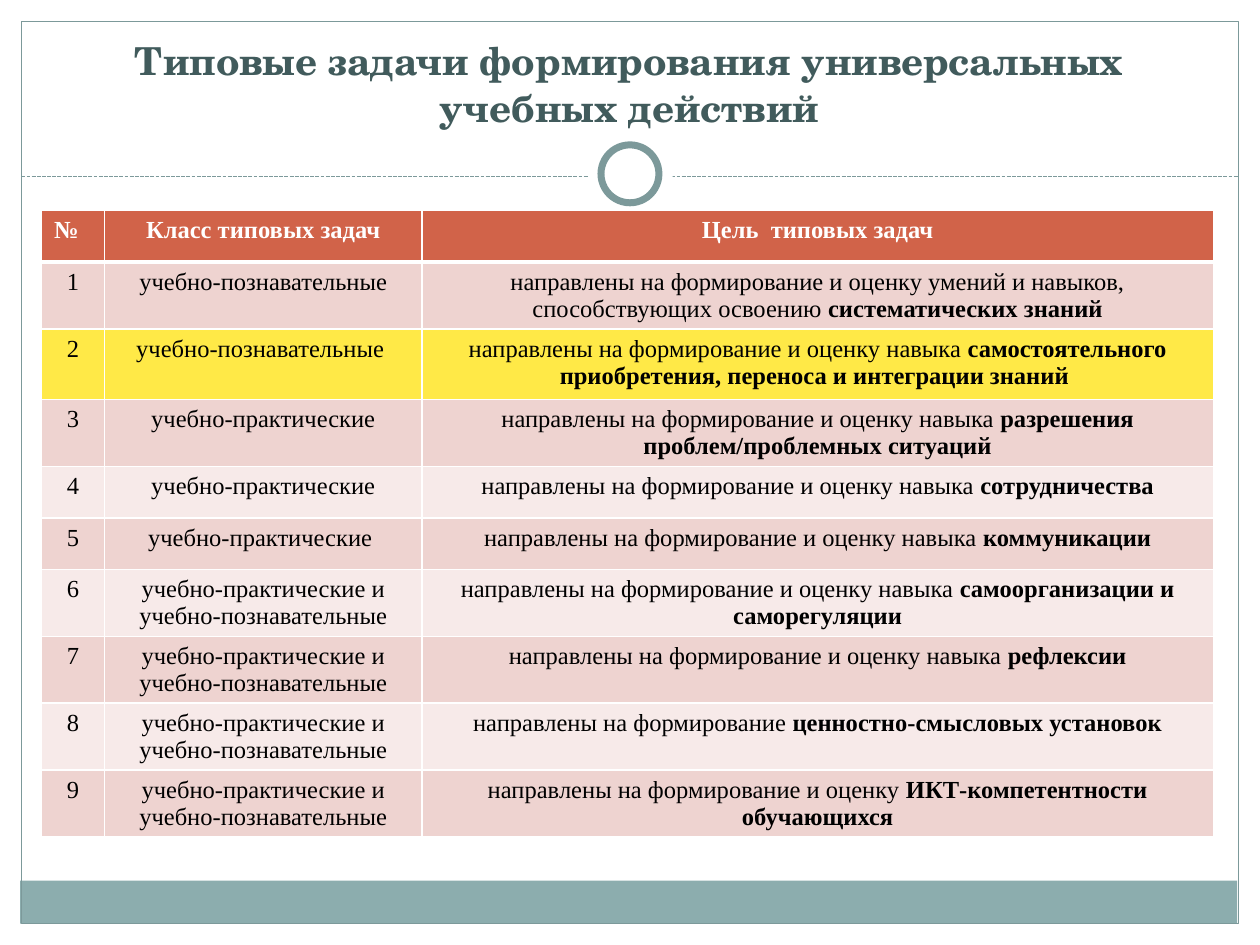
from lxml.etree import SubElement
from pptx import Presentation
from pptx.dml.color import RGBColor
from pptx.enum.dml import MSO_LINE
from pptx.enum.shapes import MSO_CONNECTOR, MSO_SHAPE
from pptx.enum.text import MSO_ANCHOR, PP_ALIGN
from pptx.oxml import parse_xml
from pptx.oxml.ns import nsdecls, qn
from pptx.util import Inches, Pt

COLORS = {
    "white": "FFFFFF", "black": "000000", "frame": "7C999A", "footer": "8CADAE",
    "title": "415B5C", "header": "D16349", "odd": "EED3D0", "even": "F7EAE9",
    "highlight": "FFE947",
}
TITLE = "Типовые задачи формирования универсальных учебных действий"
HEADERS = ["№", "Класс типовых задач", "Цель  типовых задач"]
COGNITIVE = "учебно-познавательные"
PRACTICAL = "учебно-практические"
BOTH = f"{PRACTICAL} и {COGNITIVE}"
FORMING = "направлены на формирование "
ASSESSING = FORMING + "и оценку "
SKILL = ASSESSING + "навыка "
# task class, plain part of the goal, bold part of the goal
TASKS = [
    (COGNITIVE, ASSESSING + "умений и навыков, способствующих освоению ",
     "систематических знаний"),
    (COGNITIVE + " ", SKILL, "самостоятельного приобретения, переноса и интеграции знаний "),
    (PRACTICAL, SKILL, "разрешения проблем/проблемных ситуаций"),
    (PRACTICAL, SKILL, "сотрудничества"),
    (PRACTICAL + " ", SKILL, "коммуникации"),
    (BOTH, SKILL, "самоорганизации и саморегуляции"),
    (BOTH, SKILL, "рефлексии"),
    (BOTH, FORMING, "ценностно-смысловых установок"),
    (BOTH, ASSESSING, "ИКТ-компетентности обучающихся"),
]
HIGHLIGHTED = 2
COL_WIDTHS = [0.5, 2.52, 6.28]
ROW_HEIGHT, HIGHLIGHT_HEIGHT, TABLE_HEIGHT = 0.41, 0.56, 5.42

# shape, (left, top, width, height), fill, line width
PANELS = [
    (MSO_SHAPE.RECTANGLE, (0, 0, 10, 1.52), "white", 0),
    (MSO_SHAPE.RECTANGLE, (0, 0, 0.17, 7.5), "white", 0),
    (MSO_SHAPE.RECTANGLE, (9.83, 0, 0.17, 7.5), "white", 0),
    (MSO_SHAPE.RECTANGLE, (0.16, 6.99, 9.66, 0.34), "footer", 0),
    (MSO_SHAPE.RECTANGLE, (0.17, 0.17, 9.66, 7.16), None, 0.75),
]
RINGS = [
    (MSO_SHAPE.OVAL, (4.67, 1.05, 0.67, 0.67), "white", 0),
    (MSO_SHAPE.OVAL, (4.77, 1.15, 0.46, 0.46), "white", 4),
]


def rgb(name):
    return RGBColor.from_string(COLORS[name])


def add_text(p, text, size=14, font="Times New Roman", color="black", bold=False,
             align=PP_ALIGN.CENTER):
    p.alignment = align
    r = p.add_run()
    r.text = text
    r.font.size, r.font.name, r.font.bold = Pt(size), font, bold
    r.font.color.rgb = rgb(color)


def add_panel(slide, kind, box, fill, line_width):
    sp = slide.shapes.add_shape(kind, *map(Inches, box))
    sp.shadow.inherit = False
    if fill:
        sp.fill.solid()
        sp.fill.fore_color.rgb = rgb(fill)
    else:
        sp.fill.background()
    if line_width:
        sp.line.color.rgb = rgb("frame")
        sp.line.width = Pt(line_width)
    else:
        sp.line.fill.background()


def add_divider(slide, y):
    line = slide.shapes.add_connector(
        MSO_CONNECTOR.STRAIGHT, Inches(0.17), Inches(y), Inches(9.83), Inches(y))
    line.line.color.rgb = rgb("frame")
    line.line.width = Pt(0.75)
    line.line.dash_style = MSO_LINE.SQUARE_DOT
    SubElement(line._element.spPr, qn("a:effectLst"))


def style_cell(cell, fill, bottom=1):
    cell.fill.solid()
    cell.fill.fore_color.rgb = rgb(fill)
    tc_pr = cell._tc.get_or_add_tcPr()
    for i, (side, width) in enumerate(zip("LRTB", (1, 1, 1, bottom))):
        tc_pr.insert(i, parse_xml(
            f'<a:ln{side} {nsdecls("a")} w="{Pt(width)}"><a:solidFill>'
            f'<a:srgbClr val="{COLORS["white"]}"/></a:solidFill></a:ln{side}>'))


def add_task_table(slide):
    frame = slide.shapes.add_table(
        len(TASKS) + 1, len(HEADERS), Inches(0.33), Inches(1.67),
        Inches(sum(COL_WIDTHS)), Inches(TABLE_HEIGHT))
    table = frame.table
    for col, width in zip(table.columns, COL_WIDTHS):
        col.width = Inches(width)
    for i, row in enumerate(table.rows):
        row.height = Inches(HIGHLIGHT_HEIGHT if i == HIGHLIGHTED else ROW_HEIGHT)
    frame.height = Inches(TABLE_HEIGHT)

    for i, text in enumerate(HEADERS):
        cell = table.cell(0, i)
        style_cell(cell, "header", bottom=3)
        add_text(cell.text_frame.paragraphs[0], text, color="white", bold=True,
                 align=PP_ALIGN.CENTER if i else PP_ALIGN.LEFT)
    for n, (task_class, goal, emphasis) in enumerate(TASKS, 1):
        fill = "highlight" if n == HIGHLIGHTED else "odd" if n % 2 else "even"
        for i, text in enumerate((str(n), task_class, goal)):
            cell = table.cell(n, i)
            style_cell(cell, fill)
            add_text(cell.text_frame.paragraphs[0], text)
        add_text(cell.text_frame.paragraphs[0], emphasis, bold=True)


def add_title(slide):
    """Fill the title placeholder and bring it in front of the panels."""
    title = slide.shapes.title
    title.left, title.top, title.width, title.height = map(Inches, (0.33, 0.25, 9.33, 0.83))
    tf = title.text_frame
    tf.word_wrap = True
    tf.vertical_anchor = MSO_ANCHOR.BOTTOM
    add_text(tf.paragraphs[0], TITLE, size=22, font="TeX Gyre Schola", color="title", bold=True)
    slide.shapes._spTree.append(title._element)


def main():
    prs = Presentation()
    prs.slide_width, prs.slide_height = Inches(10), Inches(7.5)
    slide = prs.slides.add_slide(prs.slide_layouts[5])
    for panel in PANELS:
        add_panel(slide, *panel)
    add_divider(slide, 1.4)
    for ring in RINGS:
        add_panel(slide, *ring)
    add_title(slide)
    add_task_table(slide)
    prs.save("out.pptx")


if __name__ == "__main__":
    main()
